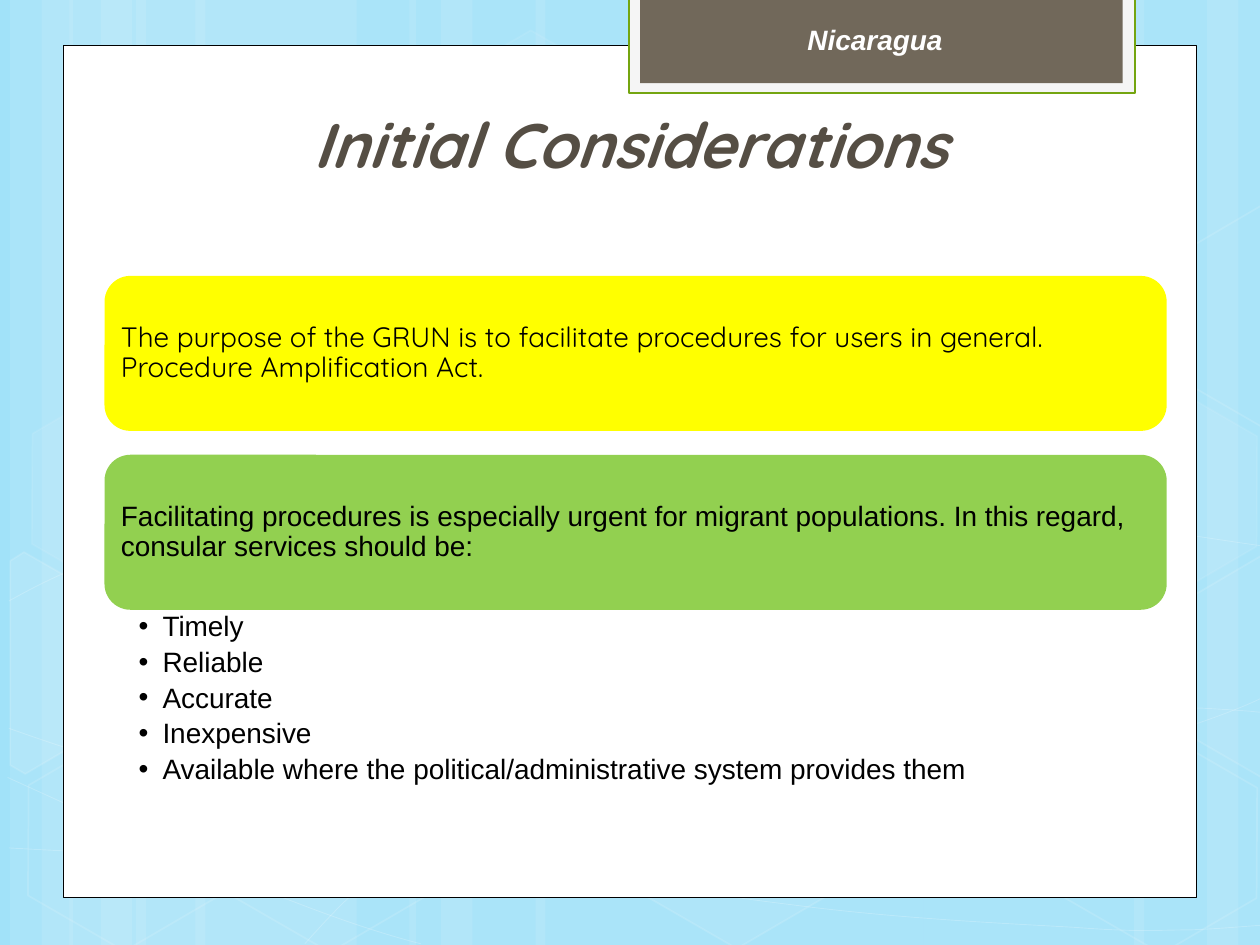
import math
import pptx
import pptx.dml.color
import pptx.enum.shapes
import pptx.enum.text
import pptx.oxml
import pptx.oxml.ns
import pptx.util

SCALE = 9144
KIND = pptx.enum.shapes.MSO_SHAPE
ALIGN = pptx.enum.text.PP_ALIGN
ANCHOR = pptx.enum.text.MSO_ANCHOR
COLORS = {
    "sky": "A1E2F9", "white": "FFFFFF", "black": "000000",
    "pale": "F5F5F5", "leaf": "74A510", "brown": "71685A",
    "title": "554E44", "yellow": "FFFF00", "green": "92D050",
}
BANDS = [
    (108, 175), (8, 50), (33, 83), (155, 175), (55, 50), (80, 83),
    (733, 175), (958, 50), (900, 83), (425, 308), (325, 50), (350, 83),
]
CURVES = [
    [(7, 673), (61, 676), (115, 679), (190, 678), (265, 677), (358, 675), (458, 665),
     (558, 655), (700, 636), (792, 617), (883, 598), (977, 568), (1007, 551)],
    [(7, 477), (36, 461), (65, 446), (121, 431), (178, 416), (259, 394), (347, 387),
     (436, 380), (544, 379), (654, 387), (764, 395), (947, 426), (1007, 434)],
    [(6, 617), (127, 672), (247, 727), (334, 749)],
    [(7, 578), (38, 589), (70, 600), (128, 616), (186, 631), (273, 656), (357, 673),
     (440, 690), (545, 708), (628, 718), (711, 729), (800, 733), (853, 736),
     (905, 740), (919, 738), (945, 738), (971, 737), (989, 735), (1007, 734)],
    [(242, 749), (260, 729), (278, 709), (302, 691), (326, 673), (360, 653), (388, 639),
     (416, 625), (433, 619), (470, 609), (506, 599), (573, 585), (608, 578),
     (644, 571), (649, 571), (680, 569), (711, 566), (760, 563), (794, 562),
     (829, 561), (886, 562), (886, 562), (886, 562), (953, 562), (953, 562),
     (971, 563), (988, 564), (997, 565), (1006, 566), (1003, 565), (1006, 566)],
]
HEXES = [
    (334, 36, 4, 8), (497, 589, 6, 12), (11, 591, None, 12),
    (14, 312, 7, 8), (174, 592, None, 12), (753, 453, 10, 12),
    (834, 593, None, 12), (834, 314, 7, 8),
]
PARTS = [
    ((36, 535), 10, [(8, 445), (19, 438), (96, 482), (95, 570), (20, 614), (8, 607)]),
    ((985, 520), 4, [(926, 485), (1001, 441), (1009, 446), (1009, 613), (1002, 617), (926, 573)]),
    ((985, 241), None, [(926, 207), (1001, 163), (1010, 168), (1009, 335), (1002, 339), (926, 295)]),
]
CARDS = [
    (219, "yellow", "Quicksand", "The purpose of the GRUN is to facilitate procedures for "
     "users in general. Procedure Amplification Act."),
    (361, "green", "Arial", "Facilitating procedures is especially urgent for migrant "
     "populations. In this regard, consular services should be:"),
]
TRAITS = ["Timely", "Reliable", "Accurate", "Inexpensive",
          "Available where the political/administrative system provides them"]


def px(num):
    """Turn px into EMU."""
    return pptx.util.Emu(round(num * SCALE))


def tone(name):
    """Return the named colour."""
    return pptx.dml.color.RGBColor.from_string(COLORS[name])


def node(tag, attrs=""):
    """Make a drawing element."""
    return pptx.oxml.parse_xml(f'<a:{tag} {pptx.oxml.ns.nsdecls("a")} {attrs}/>')


def paint(fill, name, alpha=100):
    """Give a fill a colour and an opacity in percent."""
    fill.solid()
    fill.fore_color.rgb = tone(name)
    if alpha < 100:
        color = fill._xPr.find(pptx.oxml.ns.qn("a:solidFill"))[0]
        color.append(node("alpha", f'val="{alpha * 1000}"'))


def style(shape, fill=None, alpha=100, line=None, width=1, fade=100):
    """Set the fill and outline of a shape."""
    shape.shadow.inherit = False
    if fill:
        paint(shape.fill, fill, alpha)
    else:
        shape.fill.background()
    if line:
        paint(shape.line.fill, line, fade)
        shape.line.width = pptx.util.Pt(width)
    else:
        shape.line.fill.background()


def block(slide, kind, box, **look):
    """Add a preset shape."""
    shape = slide.shapes.add_shape(kind, *map(px, box))
    style(shape, **look)
    return shape


def trace(slide, points, close=False, **look):
    """Add an outline through points."""
    spots = [(px(x), px(y)) for x, y in points]
    pen = slide.shapes.build_freeform(*spots[0], scale=1.0)
    pen.add_line_segments(spots[1:], close=close)
    shape = pen.convert_to_shape()
    style(shape, **look)
    return shape


def bend(shape):
    """Turn each three line segments of an outline into one cubic curve."""
    legs = list(shape._element.iter(pptx.oxml.ns.qn("a:lnTo")))
    for i in range(0, len(legs), 3):
        curve = node("cubicBezTo")
        legs[i].addprevious(curve)
        for leg in legs[i:i + 3]:
            curve.append(leg[0])
            leg.getparent().remove(leg)


def turn(points, mid, angle):
    """Rotate points about a centre."""
    cos, sin = math.cos(math.radians(angle)), math.sin(math.radians(angle))
    return [(mid[0] + (x - mid[0]) * cos - (y - mid[1]) * sin,
             mid[1] + (x - mid[0]) * sin + (y - mid[1]) * cos) for x, y in points]


def dot(para, size):
    """Give a paragraph a hanging bullet."""
    para.level = 1
    props = para._p.get_or_add_pPr()
    props.set("marL", str(px(19)))
    props.set("indent", str(px(-19)))
    props.append(node("buFont", 'typeface="Arial"'))
    props.append(node("buChar", 'char="•"'))
    para._p.append(node("endParaRPr", f'sz="{size * 100}"'))


def write(slide, box, lines, size=16, font="Arial", color="black", bold=False,
          align=ALIGN.LEFT, anchor=ANCHOR.TOP, pad=(10, 5, 10, 5), lead=1.0,
          after=0, dots=False):
    """Add a text box with one paragraph for each line."""
    frame = slide.shapes.add_textbox(*map(px, box)).text_frame
    frame.word_wrap = True
    frame.vertical_anchor = anchor
    frame.margin_left, frame.margin_top, frame.margin_right, frame.margin_bottom = map(px, pad)
    for i, line in enumerate(lines):
        para = frame.add_paragraph() if i else frame.paragraphs[0]
        para.alignment = align
        para.line_spacing = lead
        para.space_after = pptx.util.Pt(after)
        run = para.add_run()
        run.text = line
        run.font.size = pptx.util.Pt(size)
        run.font.name = font
        run.font.bold = run.font.italic = bold
        run.font.color.rgb = tone(color)
        if dots:
            dot(para, size)


def scene(slide):
    """Draw the backdrop of bands, curves and hexagons."""
    paint(slide.background.fill, "sky")
    for left, width in BANDS:
        block(slide, KIND.RECTANGLE, (left, 0, width, 750), fill="white", alpha=10)
    for points in CURVES:
        bend(trace(slide, points, line="white", width=0.5, fade=20))
    for left, top, alpha, fade in HEXES:
        shape = block(slide, KIND.HEXAGON, (left, top, 175, 152), fill=alpha and "white",
                      alpha=alpha or 100, line="white", fade=fade)
        shape.adjustments[0] = 0.285
        shape.rotation = 30
    for mid, alpha, points in PARTS:
        shape = trace(slide, turn(points, mid, -30), close=True, fill=alpha and "white",
                      alpha=alpha or 100, line="white", fade=12)
        shape.rotation = 30


def main():
    """Build and save the slide."""
    deck = pptx.Presentation()
    deck.slide_width, deck.slide_height = px(1000), px(750)
    slide = deck.slides.add_slide(deck.slide_layouts[6])
    scene(slide)
    block(slide, KIND.RECTANGLE, (50, 36, 900, 676), fill="white", line="black", width=0.5)
    block(slide, KIND.RECTANGLE, (499, -2, 402, 76), fill="pale", line="leaf", width=1.25)
    block(slide, KIND.RECTANGLE, (508, -2, 383, 68), fill="brown")
    write(slide, (59, 99, 882, 50), ["Initial Considerations"], size=36, font="Quicksand",
          color="title", bold=True, align=ALIGN.CENTER, anchor=ANCHOR.BOTTOM)
    for top, color, font, text in CARDS:
        block(slide, KIND.ROUNDED_RECTANGLE, (83, top, 843, 123), fill=color)
        write(slide, (89, top + 6, 831, 111), [text], font=font, anchor=ANCHOR.MIDDLE,
              pad=(7, 7, 7, 7), lead=0.9, after=6)
    write(slide, (83, 484, 843, 149), TRAITS, pad=(27, 2, 12, 2), lead=0.9, after=3.2, dots=True)
    write(slide, (531, 13, 327, 37), ["Nicaragua"], color="white", bold=True, align=ALIGN.CENTER)
    deck.save("out.pptx")


if __name__ == "__main__":
    main()
